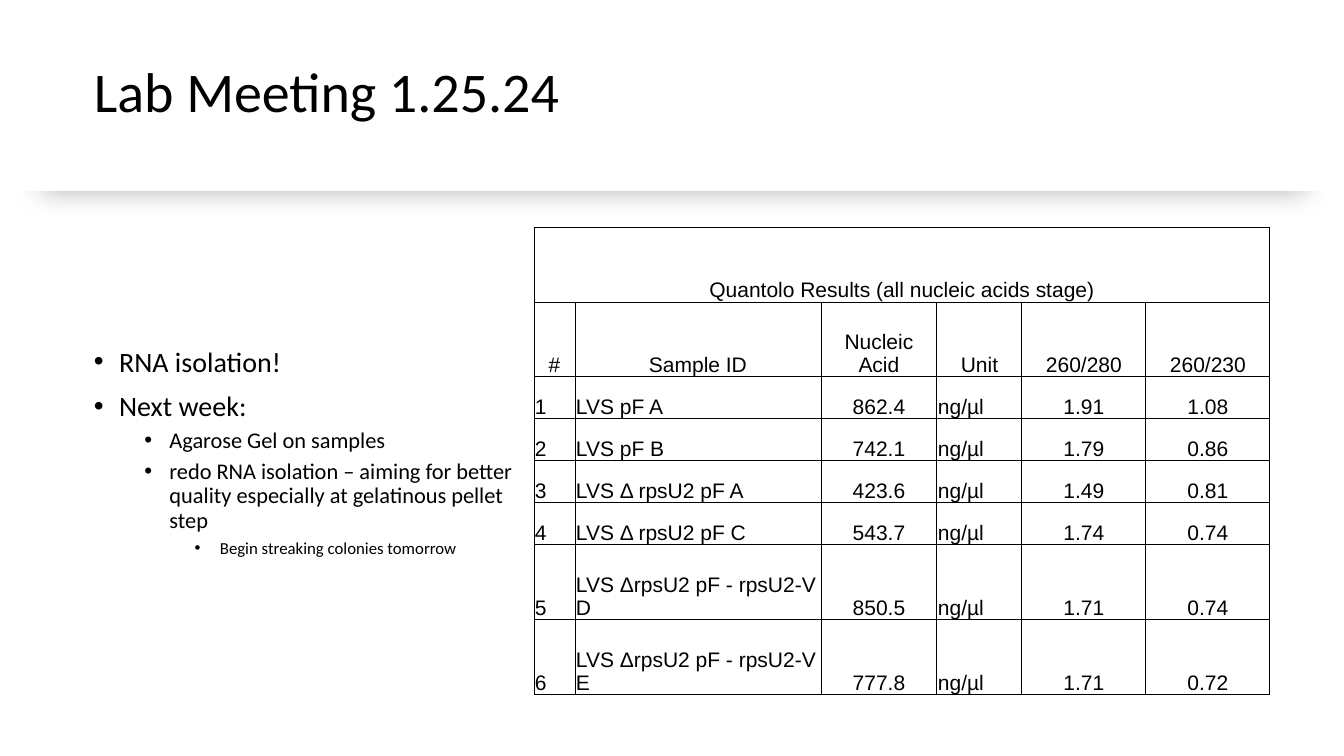
from lxml import etree
from pptx import Presentation
from pptx import util as u
from pptx.dml.color import RGBColor
from pptx.enum import shapes, text
from pptx.oxml import parse_xml
from pptx.oxml.ns import nsdecls, qn


def px(length):
    """Turn slide pixels (100.8 to the inch) into EMU."""
    return u.Emu(round(length * 914400 / 100.8))


def color(value):
    return RGBColor.from_string(value)


BLACK = "000000"
WHITE = "FFFFFF"

presentation = Presentation()
presentation.slide_width, presentation.slide_height = px(1344), px(756)
slide = presentation.slides.add_slide(presentation.slide_layouts[6])

# Header band with a soft shadow below
band = slide.shapes.add_shape(
    shapes.MSO_SHAPE.RECTANGLE, px(0), px(0), px(1344), px(191))
band.fill.solid()
band.fill.fore_color.rgb = color(WHITE)
band.line.fill.background()
band.shadow.inherit = False
effects = band.element.spPr.find(qn("a:effectLst"))
effects.append(parse_xml(
    f'<a:outerShdw {nsdecls("a")} blurRad="254000" dist="38100" dir="5460000"'
    ' sx="94000" sy="94000" algn="ctr" rotWithShape="0">'
    f'<a:srgbClr val="{BLACK}"><a:alpha val="30000"/></a:srgbClr>'
    '</a:outerShdw>'))

# Title and bullets: text, level, size, space before
title_lines = [("Lab Meeting 1.25.24", None, 40, 0)]
bullet_lines = [
    ("RNA isolation!", 0, 20, 0),
    ("Next week:", 0, 20, 10),
    ("Agarose Gel on samples", 1, 16, 5),
    ("redo RNA isolation – aiming for better quality especially"
     " at gelatinous pellet step", 1, 16, 5),
    ("Begin streaking colonies tomorrow", 2, 12, 5),
]
text_blocks = [
    (title_lines, (84, 27, 1186, 135)),
    (bullet_lines, (84, 256, 451, 394)),
]
for lines, box in text_blocks:
    frame = slide.shapes.add_textbox(*map(px, box)).text_frame
    frame.word_wrap = True
    frame.vertical_anchor = text.MSO_ANCHOR.MIDDLE
    for index, (words, level, size, space) in enumerate(lines):
        paragraph = frame.add_paragraph() if index else frame.paragraphs[0]
        paragraph.text = words
        paragraph.line_spacing = 0.9
        paragraph.space_before = u.Pt(space)
        paragraph.font.name = "Calibri"
        paragraph.font.size = u.Pt(size)
        paragraph.font.color.rgb = color(BLACK)
        if level is None:
            continue
        paragraph.level = level
        properties = paragraph._p.get_or_add_pPr()
        properties.set("marL", str(u.Inches(0.25 + 0.5 * level)))
        properties.set("indent", str(u.Inches(-0.25)))
        bullet_font = parse_xml(f'<a:buFont {nsdecls("a")} typeface="Arial"/>')
        bullet = parse_xml(f'<a:buChar {nsdecls("a")} char="•"/>')
        properties.find(qn("a:defRPr")).addprevious(bullet_font)
        bullet_font.addnext(bullet)

# Results table
rows = [
    ["Quantolo Results (all nucleic acids stage)"],
    ["#", "Sample ID", "Nucleic Acid", "Unit", "260/280", "260/230"],
    ["1", "LVS pF A", "862.4", "ng/µl", "1.91", "1.08"],
    ["2", "LVS pF B", "742.1", "ng/µl", "1.79", "0.86"],
    ["3", "LVS Δ rpsU2 pF A", "423.6", "ng/µl", "1.49", "0.81"],
    ["4", "LVS Δ rpsU2 pF C", "543.7", "ng/µl", "1.74", "0.74"],
    ["5", "LVS ΔrpsU2 pF - rpsU2-V D", "850.5", "ng/µl", "1.71", "0.74"],
    ["6", "LVS ΔrpsU2 pF - rpsU2-V E", "777.8", "ng/µl", "1.71", "0.72"],
]
column_widths = [41, 246, 116, 85, 124, 124]
row_heights = [75, 75, 42, 42, 42, 42, 75, 75]
left_columns = {0, 1, 3}

table = slide.shapes.add_table(
    len(rows), len(column_widths), px(534), px(227),
    px(sum(column_widths)), px(sum(row_heights))).table
table.first_row = False
table.horz_banding = False
for column, width in zip(table.columns, column_widths):
    column.width = px(width)
for row, height in zip(table.rows, row_heights):
    row.height = px(height)
table.cell(0, 0).merge(table.cell(0, len(column_widths) - 1))

for row_index, row in enumerate(table.rows):
    for column_index, cell in enumerate(row.cells):
        cell_properties = cell._tc.get_or_add_tcPr()
        for side in ("lnL", "lnR", "lnT", "lnB"):
            border = etree.SubElement(
                cell_properties, qn(f"a:{side}"), w=str(u.Pt(0.75)))
            line_fill = etree.SubElement(border, qn("a:solidFill"))
            etree.SubElement(line_fill, qn("a:srgbClr"), val=BLACK)
        cell.fill.background()
        cell.margin_left = cell.margin_right = cell.margin_top = px(1)
        cell.margin_bottom = 0
        cell.vertical_anchor = text.MSO_ANCHOR.BOTTOM
        if cell.is_spanned:
            continue
        cell.text = rows[row_index][column_index]
        paragraph = cell.text_frame.paragraphs[0]
        is_left = row_index > 1 and column_index in left_columns
        paragraph.alignment = (
            text.PP_ALIGN.LEFT if is_left else text.PP_ALIGN.CENTER)
        paragraph.font.name = "Arial"
        paragraph.font.size = u.Pt(15)
        paragraph.font.color.rgb = color(BLACK)

presentation.save("out.pptx")
